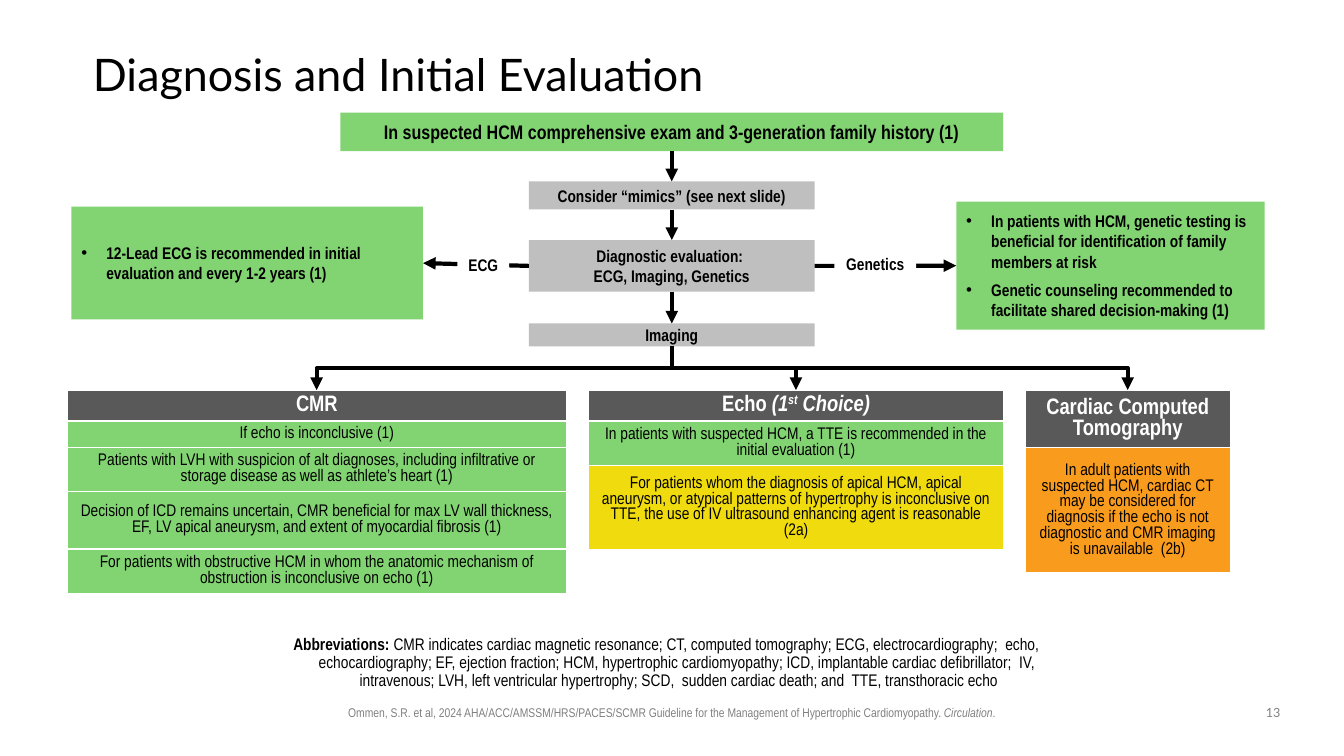
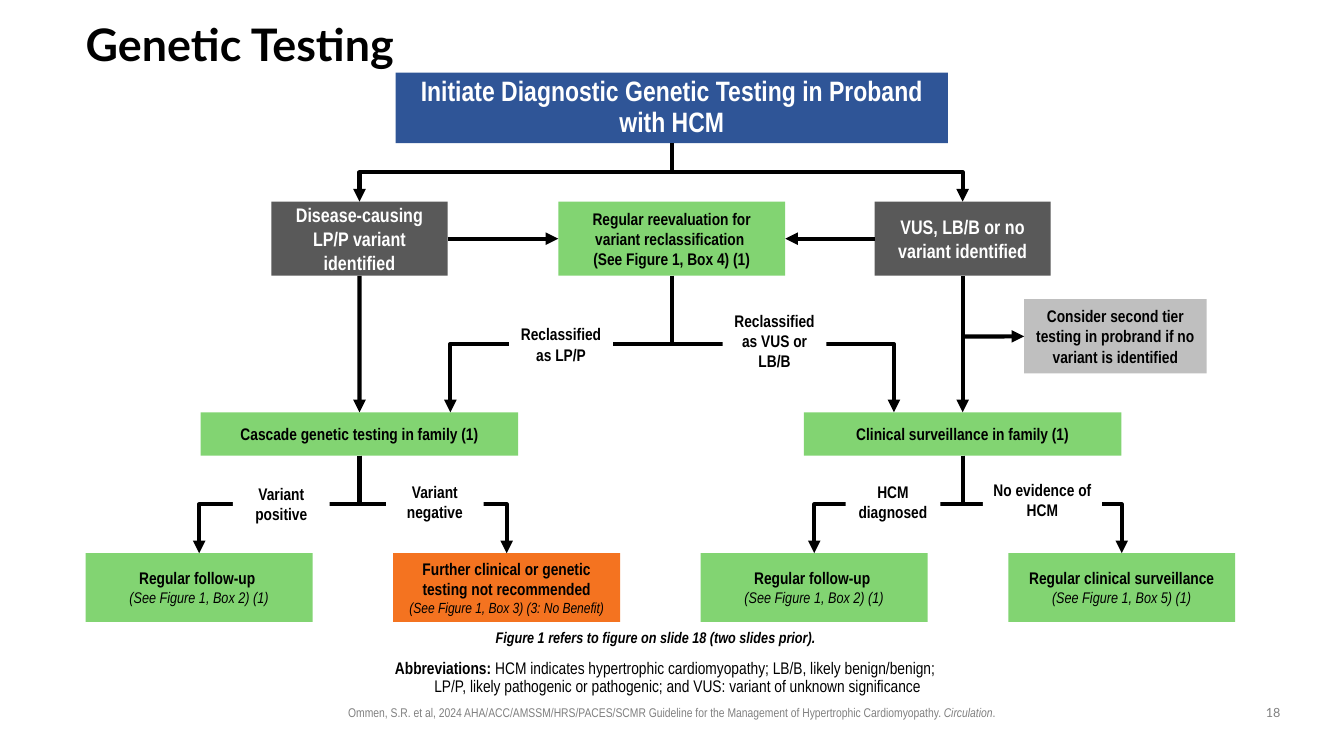
from copy import deepcopy

from lxml.etree import SubElement
from pptx import Presentation
from pptx.dml.color import RGBColor
from pptx.enum.shapes import MSO_CONNECTOR, MSO_SHAPE
from pptx.enum.text import MSO_ANCHOR, MSO_AUTO_SIZE, PP_ALIGN
from pptx.oxml.ns import qn
from pptx.util import Cm, Pt

COLORS = {
    "black": "000000", "white": "FFFFFF", "muted": "808080", "green": "82D472",
    "gray": "BFBFBF", "dark": "595959", "blue": "2F5597", "yellow": "F0DB0E",
    "amber": "F99B1D", "orange": "F47320",
}
TITLE_FONT, TEXT_FONT = "Lato", "Arial Narrow"
CENTER_X = 16.93
HANGING = Cm(0.63)
CITATION = [
    ("Ommen, S.R. et al, 2024 AHA/ACC/AMSSM/HRS/PACES/SCMR Guideline for the Management of Hypertrophic Cardiomyopathy. ", 9, ""),
    ("Circulation", 9, "i"),
    (".", 9, ""),
]


def write(para, spans, color="black", font=TEXT_FONT):
    for text, size, flags in spans:
        for index, piece in enumerate(text.split("\n")):
            if index:
                para.add_line_break()
                para._p[-1].append(deepcopy(span._r.rPr))
            if not piece:
                continue
            span = para.add_run()
            span.text = piece
            span.font.name = font
            span.font.size = Pt(size)
            span.font.bold = "b" in flags
            span.font.italic = "i" in flags
            span.font.color.rgb = RGBColor.from_string(COLORS[color])
            if "s" in flags:
                span._r.rPr.set("baseline", "30000")


def draw_arrow(page, kind, left, top, right, bottom):
    arrow = page.shapes.add_connector(kind, Cm(left), Cm(top), Cm(right), Cm(bottom))
    arrow.line.width = Pt(3)
    arrow.line.color.rgb = RGBColor.from_string(COLORS["black"])
    SubElement(arrow.line._get_or_add_ln(), qn("a:tailEnd"), type="triangle")
    SubElement(arrow._element.spPr, qn("a:effectLst"))
    return arrow


diagnosis = {
    "number": "13",
    "title": ("Diagnosis and Initial Evaluation", ""),
    "title_at": (2.34, 1.02, 21.03, 1.83),
    "abbreviations": "CMR indicates cardiac magnetic resonance; CT, computed tomography; ECG, electrocardiography;  echo, echocardiography; EF, ejection fraction; HCM, hypertrophic cardiomyopathy; ICD, implantable cardiac defibrillator;  IV,  intravenous; LVH, left ventricular hypertrophy; SCD,  sudden cardiac death; and  TTE, transthoracic echo",
    "abbreviations_at": (6.6, 15.9, 20.65, 1.07),
    "boxes": {
        "exam": ((8.58, 2.84, 16.7, 0.97), "green", "black",
                 [[("In suspected HCM comprehensive exam and 3-generation family history (1)", 14, "b")]]),
        "mimics": ((13.33, 4.57, 7.2, 0.71), "gray", "black",
                   [[("Consider “mimics” (see next slide)", 12, "b")]]),
        "evaluation": ((13.33, 6.05, 7.2, 1.3), "gray", "black",
                       [[("Diagnostic evaluation: ", 12, "b")], [("ECG, Imaging, Genetics", 12, "b")]]),
        "imaging": ((13.33, 8.15, 7.2, 0.58), "gray", "black", [[("Imaging", 12, "b")]]),
        "ecg": ((1.8, 5.21, 8.86, 2.84), "green", "black",
                [[("12-Lead ECG is recommended in initial evaluation and every 1-2 years (1)", 12, "b")]]),
        "genetics": ((24.1, 5.08, 7.77, 3.23), "green", "black", [
            [("In patients with HCM, genetic testing is beneficial for identification of family members at risk", 12, "b")],
            [("Genetic counseling recommended to facilitate shared decision-making (1)", 12, "b")]]),
    },
    "bulleted": ("ecg", "genetics"),
    "joins": [("exam", 2, "mimics", 0), ("mimics", 2, "evaluation", 0),
              ("evaluation", 2, "imaging", 0), ("evaluation", 1, "ecg", 3),
              ("evaluation", 3, "genetics", 1)],
    "forks": [(CENTER_X, 8.73, 9.83, (7.98, 20.06, 28.42))],
    "labels": [((11.53, 6.27, 1.3, 0.79), "ECG"), ((21.03, 6.27, 2.06, 0.76), "Genetics")],
}

LEAVES = [
    ("variant positive", "green", [("Regular follow-up \n", 12, "b"), ("(See Figure 1, Box 2) (1)", 11, "i")]),
    ("variant negative", "orange", [("Further clinical or genetic testing not recommended\n", 12, "b"),
                                    ("(See Figure 1, Box 3) (3: No Benefit)", 10.5, "i")]),
    ("diagnosed", "green", [("Regular follow-up \n", 12, "b"), ("(See Figure 1, Box 2) (1)", 11, "i")]),
    ("no evidence", "green", [("Regular clinical surveillance ", 12, "b"), ("(See Figure 1, Box 5) (1)", 11, "i")]),
]
LEAF_LEFT, LEAF_STEP, LEAF_WIDTH, LEAF_TOP = 2.16, 7.75, 5.72, 13.94
leaf_centers = [LEAF_LEFT + LEAF_STEP * index + LEAF_WIDTH / 2 for index in range(4)]
LEFT_BRANCH, RIGHT_BRANCH = 9.06, 24.26

genetic = {
    "number": "18",
    "title": ("Genetic Testing", "b"),
    "title_at": (2.16, 0.64, 27.86, 1.07),
    "abbreviations": "HCM indicates hypertrophic cardiomyopathy; LB/B, likely benign/benign; \nLP/P, likely pathogenic or pathogenic; and VUS: variant of unknown significance ",
    "abbreviations_at": (4.06, 16.51, 25.76, 0.71),
    "boxes": {
        "initiate": ((9.97, 1.83, 13.92, 1.78), "blue", "white",
                     [[("Initiate Diagnostic Genetic Testing in Proband with HCM", 20, "b")]]),
        "reevaluation": ((14.07, 5.08, 5.72, 1.87), "green", "black",
                         [[("Regular reevaluation for variant reclassification \n(See Figure 1, Box 4) (1)", 12, "b")]]),
        "disease": ((6.84, 5.08, 4.44, 1.87), "dark", "white",
                    [[("Disease-causing LP/P variant identified", 14, "b")]]),
        "uncertain": ((22.04, 5.08, 4.44, 1.87), "dark", "white",
                      [[("VUS, LB/B or no variant identified", 14, "b")]]),
        "second tier": ((25.81, 7.54, 4.6, 1.87), "gray", "black",
                        [[("Consider second tier testing in probrand if no variant is identified", 12, "b")]]),
        "cascade": ((5.06, 10.39, 8, 1.09), "green", "black",
                    [[("Cascade genetic testing in family (1)", 12, "b")]]),
        "surveillance": ((20.26, 10.39, 8, 1.09), "green", "black",
                         [[("Clinical surveillance in family (1)", 12, "b")]]),
    },
    "bulleted": (),
    "joins": [("disease", 3, "reevaluation", 1), ("uncertain", 1, "reevaluation", 3),
              ("disease", 2, "cascade", 0), ("uncertain", 2, "surveillance", 0)],
    "forks": [(CENTER_X, 3.61, 5.08, (LEFT_BRANCH, RIGHT_BRANCH)),
              (CENTER_X, 6.95, 10.39, (11.35, 22.53)),
              (LEFT_BRANCH, 11.48, LEAF_TOP, leaf_centers[:2]),
              (RIGHT_BRANCH, 11.48, LEAF_TOP, leaf_centers[2:])],
    "labels": [((12.83, 7.75, 2.62, 1.85), "Reclassified as LP/P"),
               ((18.21, 7.67, 2.62, 1.85), "Reclassified as VUS or LB/B"),
               ((5.87, 12.24, 2.44, 0.91), "Variant positive"),
               ((9.73, 12.09, 2.46, 1.12), "Variant negative"),
               ((21.31, 12.19, 2.39, 0.91), "HCM diagnosed"),
               ((24.77, 12.14, 3, 0.91), "No evidence of HCM")],
}
for index, (name, fill, spans) in enumerate(LEAVES):
    place = (LEAF_LEFT + LEAF_STEP * index, LEAF_TOP, LEAF_WIDTH, 1.73)
    genetic["boxes"][name] = (place, fill, "black", [spans])

deck = Presentation()
deck.slide_width, deck.slide_height = Cm(33.87), Cm(19.05)
pages, shapes_by_page = [], []

for content in (diagnosis, genetic):
    page = deck.slides.add_slide(deck.slide_layouts[1])
    pages.append(page)

    title, body = page.shapes.title, page.placeholders[1]
    for holder, place in ((title, content["title_at"]), (body, content["abbreviations_at"])):
        holder.left, holder.top, holder.width, holder.height = map(Cm, place)
        frame = holder.text_frame
        frame.auto_size = MSO_AUTO_SIZE.NONE
        frame.word_wrap = True
        frame.margin_left = 0
        frame.paragraphs[0].line_spacing = 0.9
        frame.paragraphs[0].space_before = Pt(0)
    frame = title.text_frame
    frame.margin_top = frame.margin_right = frame.margin_bottom = 0
    frame.vertical_anchor = MSO_ANCHOR.MIDDLE
    heading, weight = content["title"]
    para = frame.paragraphs[0]
    para.alignment = PP_ALIGN.LEFT
    write(para, [(heading, 32, weight)], font=TITLE_FONT)

    para = body.text_frame.paragraphs[0]
    para.alignment = PP_ALIGN.CENTER
    properties = para._p.get_or_add_pPr()
    properties.set("marL", str(HANGING))
    properties.set("indent", str(-HANGING))
    SubElement(properties, qn("a:buNone"))
    write(para, [("Abbreviations: ", 12, "b"), (content["abbreviations"], 12, "")])

    boxes = {}
    labels = {text: (place, "white", "black", [[(text, 12, "b")]]) for place, text in content["labels"]}
    for group in (content["boxes"], labels):
        if group is labels:
            for begin, begin_site, end, end_site in content["joins"]:
                arrow = draw_arrow(page, MSO_CONNECTOR.STRAIGHT, 0, 0, 1, 1)
                arrow.begin_connect(boxes[begin], begin_site)
                arrow.end_connect(boxes[end], end_site)
            for start_x, start_y, end_y, targets in content["forks"]:
                for target_x in targets:
                    middle_x, middle_y = (start_x + target_x) / 2, (start_y + end_y) / 2
                    half_drop, half_run = (end_y - start_y) / 2, abs(target_x - start_x) / 2
                    arrow = draw_arrow(page, MSO_CONNECTOR.ELBOW,
                                       middle_x - half_drop, middle_y - half_run,
                                       middle_x + half_drop, middle_y + half_run)
                    transform = arrow._element.spPr.find(qn("a:xfrm"))
                    rightward = target_x > start_x
                    transform.set("rot", str((270 if rightward else 90) * 60000))
                    if rightward:
                        transform.set("flipH", "1")
        for name, (place, fill, color, lines) in group.items():
            box = page.shapes.add_shape(MSO_SHAPE.RECTANGLE, *map(Cm, place))
            boxes[name] = box
            box.shadow.inherit = False
            box.fill.solid()
            box.fill.fore_color.rgb = RGBColor.from_string(COLORS[fill])
            box.line.fill.background()
            frame = box.text_frame
            frame.word_wrap = True
            frame.vertical_anchor = MSO_ANCHOR.MIDDLE
            if name == "initiate":
                frame.margin_left = frame.margin_top = frame.margin_right = frame.margin_bottom = 0
                frame.paragraphs[0].line_spacing = 0.9
            for index, spans in enumerate(lines):
                para = frame.add_paragraph() if index else frame.paragraphs[0]
                para.alignment = PP_ALIGN.CENTER
                if name in content["bulleted"]:
                    para.alignment = PP_ALIGN.LEFT
                    para.space_after = Pt(6)
                    properties = para._p.get_or_add_pPr()
                    properties.set("marL", str(HANGING))
                    properties.set("indent", str(-HANGING))
                    SubElement(properties, qn("a:buFont"), typeface="Arial")
                    SubElement(properties, qn("a:buChar"), char="•")
                write(para, spans, color)
    shapes_by_page.append(boxes)

    for place, spans, font in (((7.47, 17.65, 18.92, 0.64), CITATION, TEXT_FONT),
                               ((31.55, 17.65, 1.07, 0.66), [(content["number"], 9, "")], TITLE_FONT)):
        box = page.shapes.add_textbox(*map(Cm, place))
        box.text_frame.word_wrap = True
        para = box.text_frame.paragraphs[0]
        para.alignment = PP_ALIGN.CENTER
        write(para, spans, "muted", font)

TABLES = [
    (1.7, 12.57, [
        (0.76, "dark", [("CMR", 16, "b")]),
        (0.66, "green", [("If echo is inconclusive (1)", 12, "")]),
        (1.05, "green", [("Patients with LVH with suspicion of alt diagnoses, including infiltrative or storage disease as well as athlete’s heart (1)", 12, "")]),
        (1.45, "green", [("Decision of ICD remains uncertain, CMR beneficial for max LV wall thickness, EF, LV apical aneurysm, and extent of myocardial fibrosis (1)", 12, "")]),
        (1.05, "green", [("For patients with obstructive HCM in whom the anatomic mechanism of obstruction is inconclusive on echo (1)", 12, "")])]),
    (14.83, 10.46, [
        (0.76, "dark", [("Echo ", 16, "b"), ("(1", 16, "bi"), ("st", 16, "bis"), (" Choice)", 16, "bi")]),
        (1.05, "green", [("In patients with suspected HCM, a TTE is recommended in the initial evaluation (1)", 12, "")]),
        (1.85, "yellow", [("For patients whom the diagnosis of apical HCM, apical aneurysm, or atypical patterns of hypertrophy is inconclusive on TTE, the use of IV ultrasound enhancing agent is reasonable (2a)", 12, "")])]),
    (25.83, 5.18, [
        (1.32, "dark", [("Cardiac Computed Tomography", 16, "b")]),
        (2.62, "amber", [("In adult patients with suspected HCM, cardiac CT may be considered for diagnosis if the echo is not diagnostic and CMR imaging is unavailable  (2b)", 12, "")])]),
]
for left, width, rows in TABLES:
    height = sum(row[0] for row in rows)
    table = pages[0].shapes.add_table(len(rows), 1, Cm(left), Cm(9.83), Cm(width), Cm(height)).table
    for index, (row_height, fill, spans) in enumerate(rows):
        table.rows[index].height = Cm(row_height)
        cell = table.cell(index, 0)
        cell.fill.solid()
        cell.fill.fore_color.rgb = RGBColor.from_string(COLORS[fill])
        cell.vertical_anchor = MSO_ANCHOR.MIDDLE
        cell.margin_top = cell.margin_bottom = Cm(0.05)
        para = cell.text_frame.paragraphs[0]
        para.alignment = PP_ALIGN.CENTER
        write(para, spans, "white" if fill == "dark" else "black")

arrow = draw_arrow(pages[1], MSO_CONNECTOR.STRAIGHT, RIGHT_BRANCH, 8.48, 25.81, 8.48)
arrow.end_connect(shapes_by_page[1]["second tier"], 1)
box = pages[1].shapes.add_textbox(Cm(12.24), Cm(15.7), Cm(16.92), Cm(0.74))
box.text_frame.word_wrap = True
write(box.text_frame.paragraphs[0], [("Figure 1 refers to figure on slide 18 (two slides prior).", 11, "bi")])

deck.save("out.pptx")
